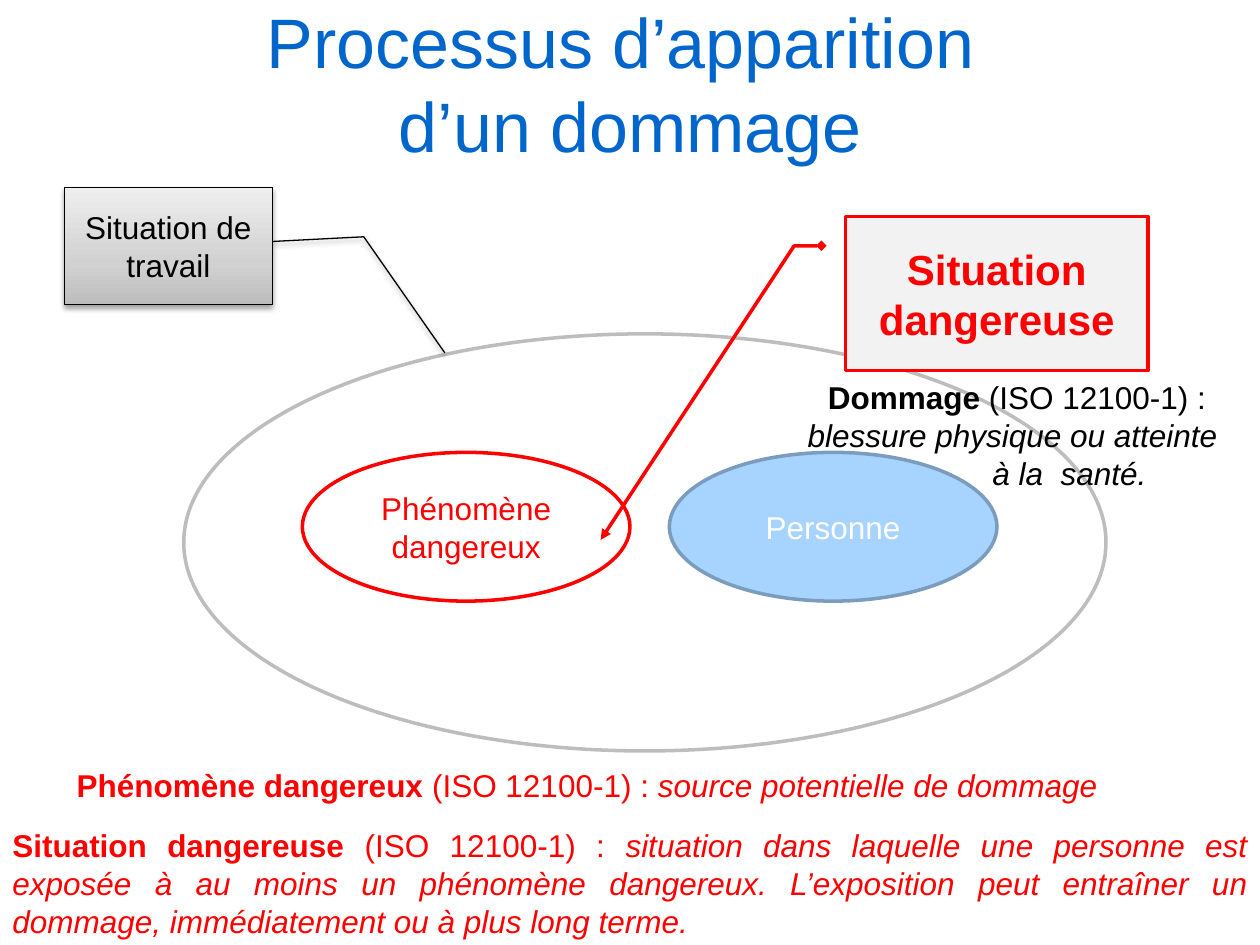
from typing import NamedTuple, Optional

from lxml.etree import SubElement
from pptx import Presentation
from pptx.dml.color import RGBColor
from pptx.enum.shapes import MSO_SHAPE
from pptx.enum.text import MSO_ANCHOR, PP_ALIGN
from pptx.oxml import parse_xml
from pptx.oxml.ns import nsdecls, qn
from pptx.util import Pt

RED, BLACK, WHITE = "FF0000", "000000", "FFFFFF"


class Box(NamedTuple):
    left: float
    top: float
    width: float
    height: float


class Figure(NamedTuple):
    kind: MSO_SHAPE
    box: Box
    line: str
    weight: float = 2
    fill: Optional[str] = None
    text: str = ""
    color: str = BLACK
    size: float = 18
    bold: bool = False
    adjust: tuple = ()


class Definition(NamedTuple):
    box: Box
    term: str
    meaning: str
    color: str = RED
    align: PP_ALIGN = PP_ALIGN.LEFT


def rgb(color: str) -> RGBColor:
    return RGBColor.from_string(color)


def add_run(p, text: str, *, size: float = 18, color: str = BLACK,
            bold: bool = False, italic: bool = False):
    """Add text to a paragraph; a vertical tab becomes a line break."""
    for i, part in enumerate(text.split("\v")):
        if i:
            p.add_line_break()
        r = p.add_run()
        r.text = part
        r.font.name, r.font.size = "Arial", Pt(size)
        r.font.bold, r.font.italic = bold, italic
        r.font.color.rgb = rgb(color)


def add_box(s, box: Box):
    tb = s.shapes.add_textbox(*map(Pt, box))
    tb.text_frame.word_wrap = True
    return tb.text_frame


def add_figure(s, fig: Figure):
    sp = s.shapes.add_shape(fig.kind, *map(Pt, fig.box))
    sp.shadow.inherit = False
    for i, value in enumerate(fig.adjust):
        sp.adjustments[i] = value
    if fig.fill:
        sp.fill.solid()
        sp.fill.fore_color.rgb = rgb(fig.fill)
    else:
        sp.fill.background()
    sp.line.color.rgb = rgb(fig.line)
    sp.line.width = Pt(fig.weight)
    tf = sp.text_frame
    tf.word_wrap = True
    tf.vertical_anchor = MSO_ANCHOR.MIDDLE
    p = tf.paragraphs[0]
    p.alignment = PP_ALIGN.CENTER
    if fig.text:
        add_run(p, fig.text, size=fig.size, color=fig.color, bold=fig.bold)
    return sp


def add_arrowheads(sp, head: str, tail: str):
    ln = sp._element.spPr.find(qn("a:ln"))
    SubElement(ln, qn("a:headEnd"), type=head)
    SubElement(ln, qn("a:tailEnd"), type=tail)


def add_gradient(sp, stops: tuple):
    """Fill from bottom to top."""
    gs = "".join(f'<a:gs pos="{pos * 1000}"><a:srgbClr val="{color}"/></a:gs>'
                 for pos, color in stops)
    spPr = sp._element.spPr
    spPr.replace(spPr.find(qn("a:solidFill")), parse_xml(
        f'<a:gradFill {nsdecls("a")} rotWithShape="1"><a:gsLst>{gs}</a:gsLst>'
        '<a:lin ang="16200000" scaled="0"/></a:gradFill>'))


def add_shadow(sp, color: str, alpha: int, blur: float, dist: float):
    effects = sp._element.spPr.find(qn("a:effectLst"))
    effects.append(parse_xml(
        f'<a:outerShdw {nsdecls("a")} blurRad="{Pt(blur)}" dist="{Pt(dist)}" '
        f'dir="5400000" rotWithShape="0"><a:srgbClr val="{color}">'
        f'<a:alpha val="{alpha * 1000}"/></a:srgbClr></a:outerShdw>'))


def add_definition(s, d: Definition):
    tf = add_box(s, d.box)
    p = tf.paragraphs[0]
    p.alignment = d.align
    add_run(p, f"{d.term} ", color=d.color, bold=True)
    add_run(p, "(ISO 12100-1) : ", color=d.color)
    add_run(p, d.meaning, color=d.color, italic=True)
    return tf


ELLIPSES = (
    Figure(MSO_SHAPE.OVAL, Box(382.5, 258.5, 187.2, 85), "7C9CBD",
           fill="A7D3FF", text="Personne", color=WHITE),
    Figure(MSO_SHAPE.OVAL, Box(172.8, 258.5, 187.2, 85), RED,
           text="Phénomène dangereux", color=RED),
    Figure(MSO_SHAPE.OVAL, Box(105, 190.8, 527, 238.3), "BDBDBD"),
)
DANGER = Figure(MSO_SHAPE.LINE_CALLOUT_2, Box(483.2, 123.8, 172.8, 88), RED,
                fill="F2F2F2", text="Situation dangereuse", color=RED,
                size=24, bold=True,
                adjust=(0.19, -0.08, 0.19, -0.17, 2.1, -0.81))
WORK = Figure(MSO_SHAPE.LINE_CALLOUT_2, Box(36.8, 107.2, 118.8, 67), BLACK,
              weight=0.75, fill="D1D1D1", text="Situation de travail",
              adjust=(0.46, 1, 0.42, 1.44, 1.41, 1.83))
DEFINITIONS = (
    Definition(Box(36.8, 434.2, 623.5, 29), "Phénomène dangereux",
               "source potentielle de dommage"),
    Definition(Box(0, 468.7, 720, 72.7), "Situation dangereuse",
               "situation dans laquelle une personne est exposée à au moins "
               "un phénomène dangereux. L’exposition peut entraîner un "
               "dommage, immédiatement ou à plus long terme.",
               align=PP_ALIGN.JUSTIFY),
)
DAMAGE = Definition(Box(445, 212.4, 272.2, 72.7), "Dommage",
                    "blessure physique ou atteinte ", BLACK, PP_ALIGN.CENTER)


def main():
    prs = Presentation()
    prs.slide_width, prs.slide_height = Pt(720), Pt(540)
    s = prs.slides.add_slide(prs.slide_layouts[6])

    # Title
    tf = add_box(s, Box(36, 5.8, 648, 82.8))
    tf.vertical_anchor = MSO_ANCHOR.MIDDLE
    p = tf.paragraphs[0]
    p.alignment = PP_ALIGN.CENTER
    add_run(p, "Processus d’apparition \vd’un dommage", size=40, color="0066CC")

    # Diagram
    for fig in ELLIPSES:
        add_figure(s, fig)
    add_arrowheads(add_figure(s, DANGER), "diamond", "triangle")
    work = add_figure(s, WORK)
    add_gradient(work, ((0, "BDBDBD"), (35, "D1D1D1"), (100, "EEEEEE")))
    add_shadow(work, BLACK, alpha=38, blur=3.1, dist=1.6)

    # Definitions
    for d in DEFINITIONS:
        add_definition(s, d)
    p = add_definition(s, DAMAGE).add_paragraph()
    p.alignment = PP_ALIGN.CENTER
    p._p.get_or_add_pPr().set("marL", str(Pt(60)))
    add_run(p, "à la  santé.", italic=True)

    prs.save("out.pptx")


if __name__ == "__main__":
    main()
